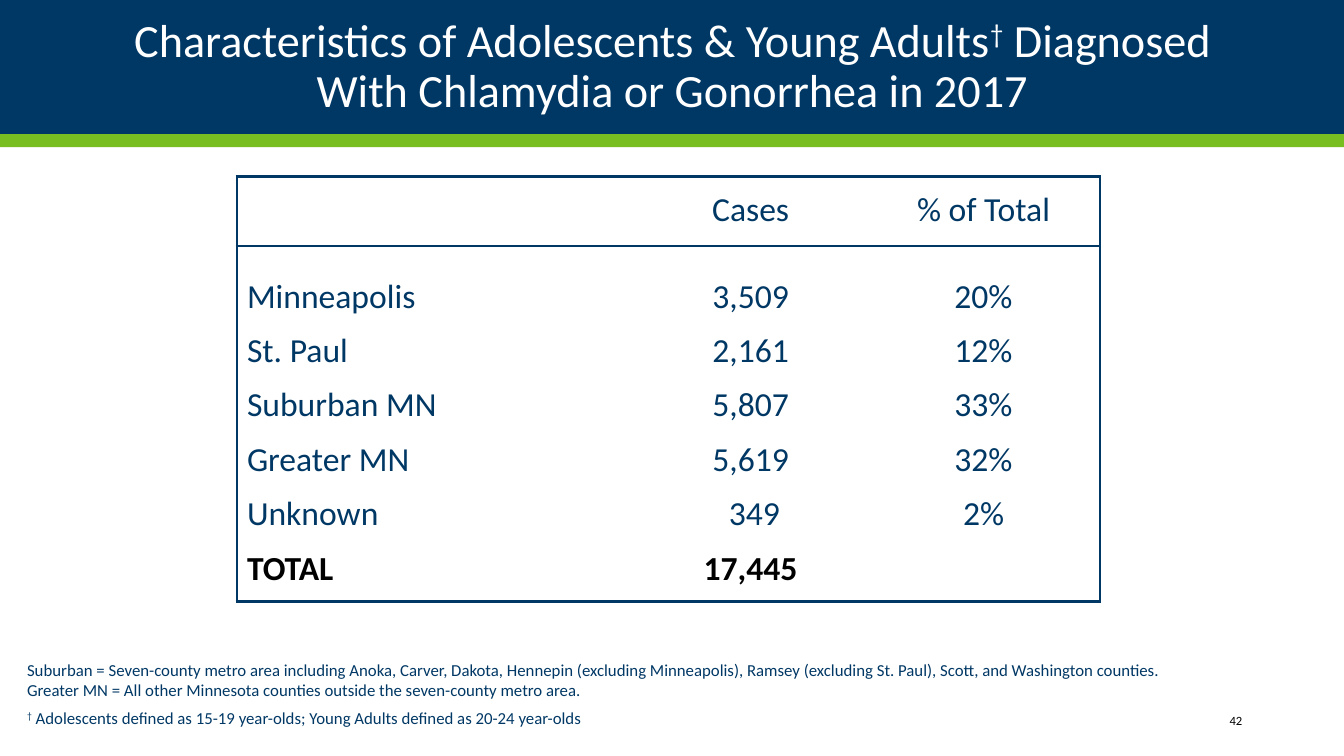
from pptx import Presentation
from pptx.util import Inches, Pt
from pptx.dml.color import RGBColor as RGB
from pptx.enum.shapes import MSO_SHAPE as Shape
from pptx.enum.text import PP_ALIGN as Align, MSO_ANCHOR as Anchor, MSO_AUTO_SIZE as Fit
from pptx.oxml.ns import qn
from lxml.etree import SubElement as Sub

HUES = {"navy": "003865", "green": "78BE21", "white": "FFFFFF", "black": "000000"}
FACE = "Calibri"
TITLE = ["Characteristics of Adolescents & Young Adults", "†",
         " Diagnosed With Chlamydia or Gonorrhea in 2017"]
ROWS = [
    ("", "Cases", "% of Total"),
    ("", "", ""),
    ("Minneapolis", "3,509", "20%"),
    ("St. Paul", "2,161", "12%"),
    ("Suburban MN", "5,807", "33%"),
    ("Greater MN", "5,619", "32%"),
    ("Unknown", " 349", "2%"),
    ("TOTAL", "17,445", ""),
]
WIDTHS = [3.94, 2.31, 2.31]
HEIGHTS = [0.69, 0.29] + [0.54] * 6
NOTES = [
    ["Suburban = Seven-county metro area including Anoka, Carver, Dakota, Hennepin "
     "(excluding Minneapolis), Ramsey (excluding St. Paul), Scott, and Washington counties. "
     "Greater MN = All other Minnesota counties outside the seven-county metro area."],
    ["†", " Adolescents defined as 15-19 year-olds; Young Adults defined as 20-24 year-olds"],
]
PAGE = "42"
BANDS = [(0, 1.33, "navy"), (1.33, 0.13, "green")]


def hue(name):
    return RGB.from_string(HUES[name])


def write(para, parts, size, color, align=Align.LEFT, bold=False):
    for part in parts:
        run = para.add_run()
        run.text = part
        if part == "†":
            run._r.get_or_add_rPr().set("baseline", "30000")
    font = para.font
    font.name, font.size, font.bold = FACE, Pt(size), bold
    font.color.rgb = hue(color)
    para.alignment = align


def edge(cell, side, drawn):
    line = Sub(cell._tc.get_or_add_tcPr(), qn("a:ln" + side), w=str(Pt(2.25)))
    if drawn:
        fill = Sub(line, qn("a:solidFill"))
        Sub(fill, qn("a:srgbClr"), val=HUES["navy"])
    else:
        Sub(line, qn("a:noFill"))


def add_box(slide, *place):
    frame = slide.shapes.add_textbox(*map(Inches, place)).text_frame
    frame.word_wrap = True
    return frame


def add_grid(slide):
    last, end = len(ROWS) - 1, len(WIDTHS) - 1
    place = map(Inches, (2.35, 1.75, sum(WIDTHS), sum(HEIGHTS)))
    grid = slide.shapes.add_table(len(ROWS), len(WIDTHS), *place).table
    grid.first_row = grid.horz_banding = False
    for col, width in zip(grid.columns, WIDTHS):
        col.width = Inches(width)
    for r, texts in enumerate(ROWS):
        grid.rows[r].height = Inches(HEIGHTS[r])
        for c, text in enumerate(texts):
            cell = grid.cell(r, c)
            edge(cell, "L", c == 0)
            edge(cell, "R", c == end)
            edge(cell, "T", r in (0, 1))
            edge(cell, "B", r in (0, last))
            cell.fill.background()
            cell.vertical_anchor = Anchor.TOP if r else Anchor.MIDDLE
            para = cell.text_frame.paragraphs[0]
            write(para, [text] if text else [], 24 if any(texts) else 8,
                  "black" if r == last else "navy",
                  Align.CENTER if c else Align.LEFT, r == last)
            para.line_spacing = 0.85
            para.space_after = Pt(6 if any(texts) else 0)


def main():
    deck = Presentation()
    deck.slide_width, deck.slide_height = Inches(13.33), Inches(7.5)
    slide = deck.slides.add_slide(deck.slide_layouts[5])
    title = slide.shapes.title
    for top, height, color in BANDS:
        band = slide.shapes.add_shape(Shape.RECTANGLE, 0, Inches(top),
                                      deck.slide_width, Inches(height))
        band.shadow.inherit = False
        band.fill.solid()
        band.fill.fore_color.rgb = hue(color)
        band.line.fill.background()
        title._element.addprevious(band._element)

    title.left, title.top, title.width, title.height = map(Inches, (0.92, 0.17, 11.5, 1))
    frame = title.text_frame
    frame.auto_size, frame.vertical_anchor = Fit.NONE, Anchor.MIDDLE
    write(frame.paragraphs[0], TITLE, 33, "white", Align.CENTER)
    frame.paragraphs[0].line_spacing = 0.9

    add_grid(slide)

    foot = add_box(slide, 0.17, 6.34, 11.84, 1.01)
    foot.margin_top, foot.margin_bottom = Inches(0.2), Inches(0.1)
    for i, parts in enumerate(NOTES):
        para = foot.add_paragraph() if i else foot.paragraphs[0]
        write(para, parts, 12, "navy")
        para.space_before = Pt(6)

    page = add_box(slide, 10.82, 6.95, 1.6, 0.4)
    page.vertical_anchor = Anchor.MIDDLE
    write(page.paragraphs[0], [PAGE], 9, "black", Align.RIGHT)
    deck.save("out.pptx")


if __name__ == "__main__":
    main()
